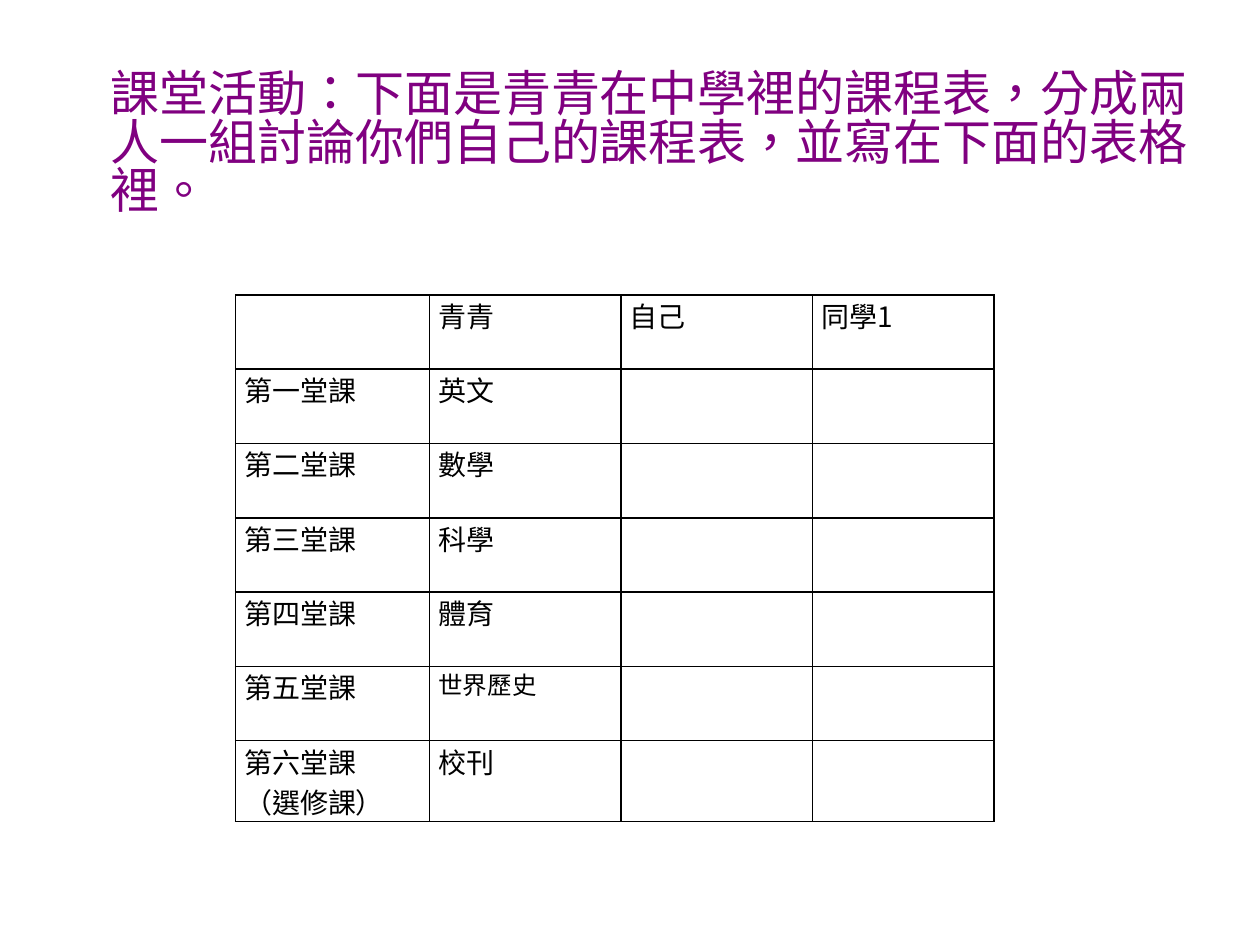
from lxml import etree
from pptx import Presentation
from pptx.dml.color import RGBColor
from pptx.enum.lang import MSO_LANGUAGE_ID as Lang
from pptx.enum.text import MSO_ANCHOR as Anchor
from pptx.oxml.ns import qn
from pptx.util import Inches, Pt

PURPLE = RGBColor(0x80, 0x00, 0x80)
BLACK = RGBColor(0x00, 0x00, 0x00)
CJK_FONT = "Noto Sans CJK SC"
LATIN_FONT = "Times New Roman"

INSTRUCTION = ("課堂活動：下面是青青在中學裡的課程表，分成兩人一組討論你們自己的課程表，"
               "並寫在下面的表格裡。")
COLUMN_WIDTHS = [1.54, 1.52, 1.52, 1.44]
ROW_HEIGHTS = [0.59] * 6 + [0.63]
TIMETABLE = [
    ["", "青青", "自己", "同學"],
    ["第一堂課", "英文", "", ""],
    ["第二堂課", "數學", "", ""],
    ["第三堂課", "科學", "", ""],
    ["第四堂課", "體育", "", ""],
    ["第五堂課", "世界歷史", "", ""],
    ["第六堂課\n（選修課）", "校刊", "", ""],
]


def format_run(run, size, color, latin=LATIN_FONT):
    font = run.font
    font.size = Pt(size)
    font.color.rgb = color
    font.name = latin
    font.language_id = Lang.TRADITIONAL_CHINESE
    east_asian = etree.Element(qn("a:ea"), typeface=CJK_FONT)
    run._r.rPr.find(qn("a:latin")).addnext(east_asian)


def add_borders(cell):
    properties = cell._tc.get_or_add_tcPr()
    for position, side in enumerate(("lnL", "lnR", "lnT", "lnB")):
        line = etree.Element(qn(f"a:{side}"), w=str(Pt(1)))
        fill = etree.SubElement(line, qn("a:solidFill"))
        etree.SubElement(fill, qn("a:srgbClr"), val=str(BLACK))
        properties.insert(position, line)


def fill_cell(cell, text):
    cell.margin_left = cell.margin_right = Inches(0.07)
    cell.margin_top = cell.margin_bottom = 0
    cell.fill.background()
    add_borders(cell)
    cell.text_frame.text = text
    for paragraph in cell.text_frame.paragraphs:
        for run in paragraph.runs:
            # The longest subject name is set slightly smaller
            format_run(run, 14 if text == "世界歷史" else 16, BLACK)


def add_timetable(slide):
    table = slide.shapes.add_table(
        len(ROW_HEIGHTS), len(COLUMN_WIDTHS), Inches(1.87), Inches(2.34),
        Inches(sum(COLUMN_WIDTHS)), Inches(sum(ROW_HEIGHTS))).table
    table.first_row = table.horz_banding = False
    for column, width in zip(table.columns, COLUMN_WIDTHS):
        column.width = Inches(width)
    for row, height, texts in zip(table.rows, ROW_HEIGHTS, TIMETABLE):
        row.height = Inches(height)
        for cell, text in zip(row.cells, texts):
            fill_cell(cell, text)

    # Classmate number in its own typeface
    number = table.cell(0, 3).text_frame.paragraphs[0].add_run()
    number.text = "1"
    format_run(number, 16, BLACK, CJK_FONT)


def add_instruction(slide):
    frame = slide.shapes.add_textbox(
        Inches(0.78), Inches(0.16), Inches(8.75), Inches(2.32)).text_frame
    frame.word_wrap = True
    frame.vertical_anchor = Anchor.MIDDLE
    frame.margin_bottom = Inches(0.38)
    frame.text = INSTRUCTION
    paragraph = frame.paragraphs[0]
    paragraph.line_spacing = 0.83
    format_run(paragraph.runs[0], 28, PURPLE, CJK_FONT)


def main():
    presentation = Presentation()
    presentation.slide_width = Inches(10)
    presentation.slide_height = Inches(7.5)
    slide = presentation.slides.add_slide(presentation.slide_layouts[6])
    add_timetable(slide)
    add_instruction(slide)
    presentation.save("out.pptx")


if __name__ == "__main__":
    main()
